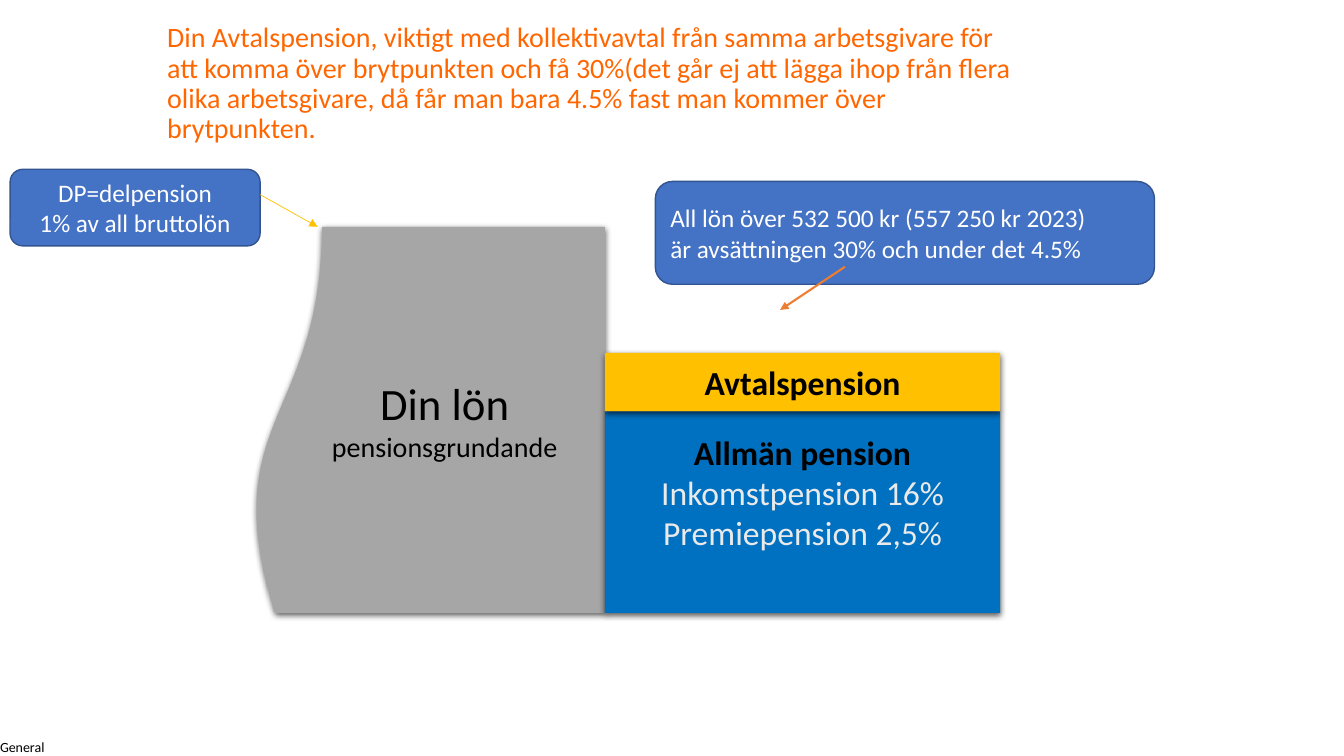
"""Build a slide on how pay feeds the parts of a pension."""
import pptx
import pptx.util
import pptx.dml.color
import pptx.enum.shapes
import pptx.enum.text
import pptx.oxml
import pptx.oxml.ns

Inches, Pt = pptx.util.Inches, pptx.util.Pt
RGBColor = pptx.dml.color.RGBColor
Kind = pptx.enum.shapes.MSO_SHAPE
Align = pptx.enum.text.PP_ALIGN
Anchor = pptx.enum.text.MSO_ANCHOR

BLACK = RGBColor(0x00, 0x00, 0x00)
WHITE = RGBColor(0xFF, 0xFF, 0xFF)
PALE = RGBColor(0xEA, 0xEA, 0xEA)
GRAY = RGBColor(0xA6, 0xA6, 0xA6)
BLUE = RGBColor(0x00, 0x70, 0xC0)
GOLD = RGBColor(0xFF, 0xC0, 0x00)
STEEL = RGBColor(0x44, 0x72, 0xC4)
NAVY = RGBColor(0x32, 0x54, 0x91)
RUST = RGBColor(0xED, 0x7D, 0x31)
ORANGE = RGBColor(0xFF, 0x66, 0x00)

WIDE, HIGH = 13.33, 7.5
SPACE = 'xmlns:a="http://schemas.openxmlformats.org/drawingml/2006/main"'
SHADE = (f'<a:effectLst {SPACE}><a:outerShdw blurRad="57150" dist="19050" dir="5400000" '
         'algn="ctr" rotWithShape="0"><a:srgbClr val="000000"><a:alpha val="63000"/>'
         '</a:srgbClr></a:outerShdw></a:effectLst>')


def part(box, left, top, width, height):
    """Return the box that covers the given shares of another box."""
    x, y, w, h = box
    return x + left * w, y + top * h, width * w, height * h


def write(shape, lines, align=Align.LEFT, gap=None, **form):
    """Fill a shape with lines of (text, size, colour, bold)."""
    frame = shape.text_frame
    form = {"word_wrap": True, "vertical_anchor": Anchor.MIDDLE, **form}
    for name, value in form.items():
        setattr(frame, name, value)
    for i, (text, size, color, bold) in enumerate(lines):
        para = frame.add_paragraph() if i else frame.paragraphs[0]
        para.alignment, para.line_spacing = align, gap
        run = para.add_run()
        run.text = text
        run.font.color.rgb = color
        for name, value in {"name": "Calibri", "size": Pt(size), "bold": bold}.items():
            setattr(run.font, name, value)


def label(slide, box, lines, **form):
    """Place plain text in the box."""
    write(slide.shapes.add_textbox(*map(Inches, box)), lines, **form)


def block(slide, kind, box, fill, edge=None):
    """Place a filled shape, with an edge or else a soft shadow."""
    shape = slide.shapes.add_shape(kind, *map(Inches, box))
    shape.shadow.inherit = False
    shape.fill.solid()
    shape.fill.fore_color.rgb = fill
    if edge:
        shape.line.color.rgb = edge
        shape.line.width = Pt(1)
    else:
        shape.line.fill.background()
        props = shape._element.spPr
        props.remove(props.find(pptx.oxml.ns.qn("a:effectLst")))
        props.append(pptx.oxml.parse_xml(SHADE))
    return shape


def arrow(slide, start, end, color, width):
    """Draw a straight arrow between two points."""
    line = slide.shapes.add_connector(pptx.enum.shapes.MSO_CONNECTOR.STRAIGHT,
                                      *map(Inches, start + end))
    line.line.color.rgb = color
    line.line.width = Pt(width)
    line.line._get_or_add_ln().append(
        pptx.oxml.parse_xml(f'<a:tailEnd {SPACE} type="triangle"/>'))
    line._element.spPr.append(pptx.oxml.parse_xml(f'<a:effectLst {SPACE}/>'))


def salary(slide, box):
    """Stand the wavy salary block on its side in the box."""
    x, y, w, h = box
    flat = x + (w - h) / 2, y + (h - w) / 2, h, w
    shape = block(slide, Kind.FLOWCHART_DOCUMENT, flat, GRAY)
    shape.rotation = 90
    shape._element.spPr.find(pptx.oxml.ns.qn("a:xfrm")).set("flipH", "1")
    write(shape, [("Din lön", 32, BLACK, False), ("pensionsgrundande", 20, BLACK, False)],
          align=Align.CENTER, word_wrap=False)
    body = shape.text_frame._txBody.bodyPr
    for name, value in {"vert": "eaVert", "rot": "10800000"}.items():
        body.set(name, value)


def pension(slide, box):
    """Stack the agreed pension on top of the public one."""
    split = 0.225
    base = block(slide, Kind.RECTANGLE, part(box, 0, split, 1, 1 - split), BLUE)
    write(base, [("Allmän pension", 24, BLACK, True),
                 ("Inkomstpension 16%", 24, PALE, False),
                 ("Premiepension 2,5%", 24, PALE, False)],
          align=Align.CENTER, word_wrap=False, margin_bottom=Inches(0.45))
    band = block(slide, Kind.RECTANGLE, part(box, 0, 0, 1, split), GOLD)
    write(band, [("Avtalspension", 24, BLACK, True)], align=Align.CENTER, word_wrap=False)


def callout(slide, box, lines, align, start, end, color, width):
    """Place a rounded note and its arrow, set in shares of the note."""
    note = block(slide, Kind.ROUNDED_RECTANGLE, box, STEEL, NAVY)
    write(note, [(text, 18, WHITE, False) for text in lines], align=align)
    ends = [part(box, *spot, 0, 0)[:2] for spot in (start, end)]
    arrow(slide, *ends, color, width)


def main():
    """Build and save the slide."""
    deck = pptx.Presentation()
    deck.slide_width, deck.slide_height = Inches(WIDE), Inches(HIGH)
    slide = deck.slides.add_slide(deck.slide_layouts[6])
    margins = dict.fromkeys(
        ("margin_left", "margin_top", "margin_right", "margin_bottom"), 0)
    label(slide, (0, HIGH - 0.17, 0.48, 0.17), [("General", 10, BLACK, False)],
          **{**margins, "word_wrap": False, "vertical_anchor": Anchor.TOP})
    title = ("Din Avtalspension, viktigt med kollektivavtal från samma arbetsgivare för "
             "att komma över brytpunkten och få 30%(det går ej att lägga ihop från flera "
             "olika arbetsgivare, då får man bara 4.5% fast man kommer över brytpunkten.")
    label(slide, (1.56, 0.25, 8.75, 1.17), [(title, 20, ORANGE, False)], gap=0.9)
    salary(slide, (2.5, 2.25, 3.5, 3.83))
    pension(slide, (6, 3.5, 3.92, 2.58))
    callout(slide, (6.5, 1.8, 4.95, 1.02),
            ["All lön över 532 500 kr (557 250 kr 2023)",
             "är avsättningen 30% och under det 4.5%"],
            Align.LEFT, (0.38, 0.83), (0.25, 1.25), RUST, 1.5)
    callout(slide, (0.1, 1.68, 2.48, 0.76), ["DP=delpension", "1% av all bruttolön"],
            Align.CENTER, (1, 0.33), (1.23, 0.75), GOLD, 0.5)
    deck.save("out.pptx")


if __name__ == "__main__":
    main()
